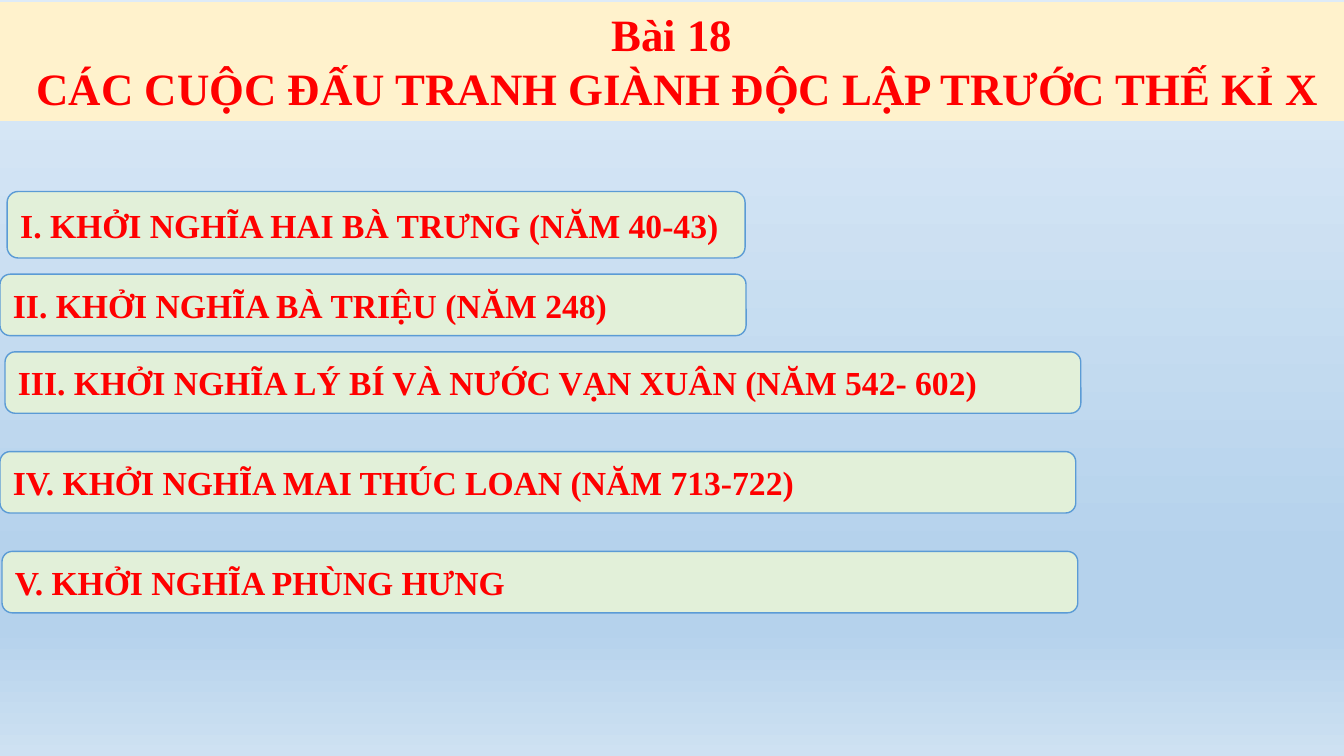
import pptx
import pptx.dml.color
import pptx.enum.shapes
import pptx.enum.text
import pptx.oxml
import pptx.oxml.ns
import pptx.util
from pptx.util import Inches

TITLE = ["Bài 18", " CÁC CUỘC ĐẤU TRANH GIÀNH ĐỘC LẬP TRƯỚC THẾ KỈ X"]
SECTIONS = [
    ("I. KHỞI NGHĨA HAI BÀ TRƯNG (NĂM 40-43)", (0.07, 1.9, 7.32, 0.66)),
    ("II. KHỞI NGHĨA BÀ TRIỆU (NĂM 248)", (0, 2.72, 7.4, 0.61)),
    ("III. KHỞI NGHĨA LÝ BÍ VÀ NƯỚC VẠN XUÂN (NĂM 542- 602)", (0.05, 3.49, 10.67, 0.61)),
    ("IV. KHỞI NGHĨA MAI THÚC LOAN (NĂM 713-722)", (0, 4.48, 10.67, 0.61)),
    ("V. KHỞI NGHĨA PHÙNG HƯNG", (0.02, 5.47, 10.67, 0.61)),
]
THEME = {
    "font": "Times New Roman",
    "text": "FF0000",
    "banner": "FFF2CC",
    "box": "E2F0D9",
    "border": "5B9BD5",
    "title_size": 32,
    "section_size": 24,
    "background": [(0, "DEEBF7"), (74, "B5D2EC"), (83, "B5D2EC"), (100, "CEE1F2")],
}


def rgb(name):
    return pptx.dml.color.RGBColor.from_string(THEME[name])


def paint_background(s):
    fill = s.background.fill
    fill.gradient()
    fill.gradient_angle = 270
    stops = s.element.find(".//" + pptx.oxml.ns.qn("a:gsLst"))
    for stop in list(stops):
        stops.remove(stop)
    for percent, color in THEME["background"]:
        stops.append(pptx.oxml.parse_xml(
            f'<a:gs {pptx.oxml.ns.nsdecls("a")} pos="{percent * 1000}">'
            f'<a:srgbClr val="{color}"/></a:gs>'))


def place(sp, box):
    sp.left, sp.top, sp.width, sp.height = map(Inches, box)


def write(sp, lines, size, align, anchor):
    tf = sp.text_frame
    tf.word_wrap = True
    tf.auto_size = pptx.enum.text.MSO_AUTO_SIZE.NONE
    tf.vertical_anchor = anchor
    for i, line in enumerate(lines):
        p = tf.add_paragraph() if i else tf.paragraphs[0]
        p.alignment = align
        r = p.add_run()
        r.text = line
        r.font.name = THEME["font"]
        r.font.size = pptx.util.Pt(THEME[size])
        r.font.bold = True
        r.font.color.rgb = rgb("text")


def add_title(s):
    sp = s.shapes.title
    place(sp, (0, 0.02, 13.33, 1.18))
    sp.fill.solid()
    sp.fill.fore_color.rgb = rgb("banner")
    write(sp, TITLE, "title_size", pptx.enum.text.PP_ALIGN.CENTER,
          pptx.enum.text.MSO_ANCHOR.TOP)


def add_section(s, text, box):
    sp = s.shapes.add_shape(pptx.enum.shapes.MSO_SHAPE.ROUNDED_RECTANGLE,
                            *map(Inches, box))
    sp.shadow.inherit = False
    sp.fill.solid()
    sp.fill.fore_color.rgb = rgb("box")
    sp.line.color.rgb = rgb("border")
    sp.line.width = pptx.util.Pt(1)
    write(sp, [text], "section_size", pptx.enum.text.PP_ALIGN.LEFT,
          pptx.enum.text.MSO_ANCHOR.MIDDLE)


def main():
    """Build the lesson outline slide and save it."""
    prs = pptx.Presentation()
    prs.slide_width, prs.slide_height = Inches(13.33), Inches(7.5)
    s = prs.slides.add_slide(prs.slide_layouts.get_by_name("Title Only"))
    paint_background(s)
    add_title(s)
    for text, box in SECTIONS:
        add_section(s, text, box)
    prs.save("out.pptx")


if __name__ == "__main__":
    main()
